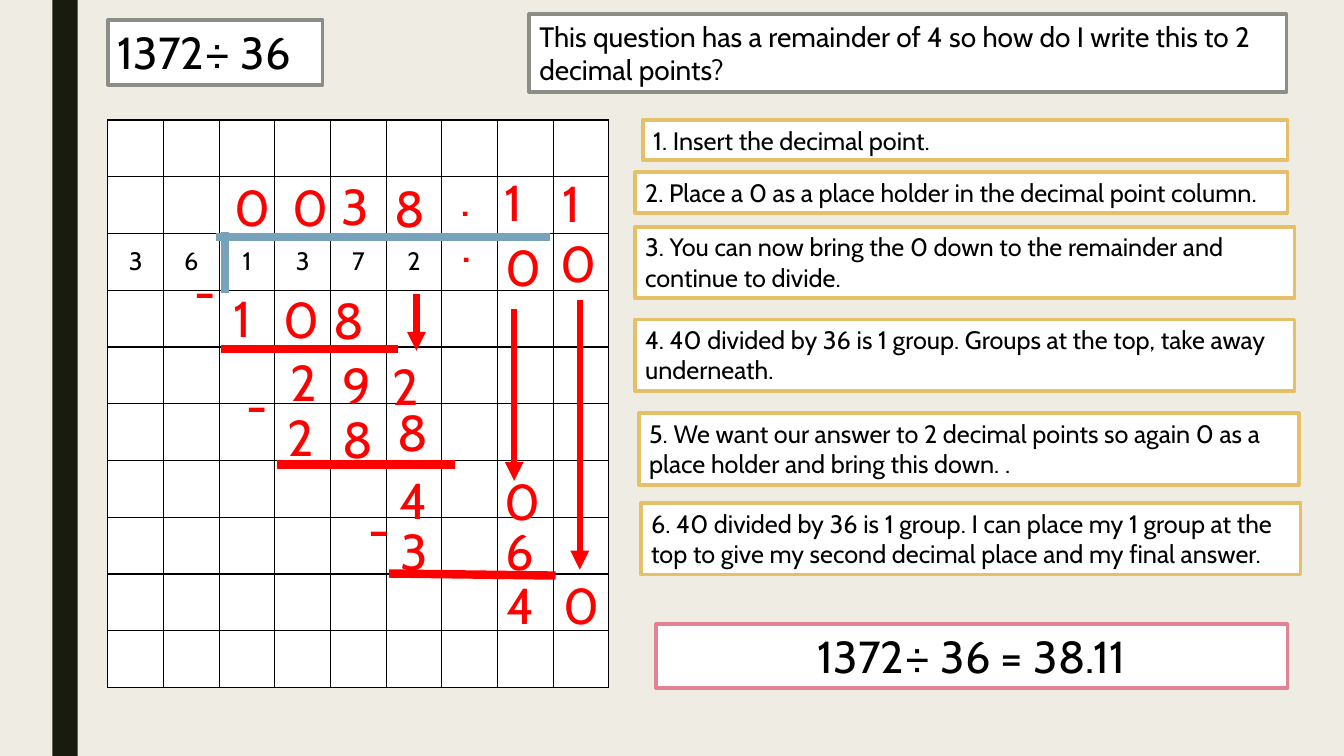
from lxml import etree
from pptx import Presentation
from pptx.dml.color import RGBColor
from pptx.enum.shapes import MSO_CONNECTOR, MSO_SHAPE
from pptx.enum.text import MSO_ANCHOR, PP_ALIGN
from pptx.oxml.ns import qn
from pptx.util import Pt

RECTANGLE = MSO_SHAPE.RECTANGLE
STRAIGHT = MSO_CONNECTOR.STRAIGHT
TOP, MIDDLE = MSO_ANCHOR.TOP, MSO_ANCHOR.MIDDLE
LEFT, CENTER = PP_ALIGN.LEFT, PP_ALIGN.CENTER
PX = 9144

THEME = {
    "font": "Cabin",
    "background": "EFEDE3", "stripe": "191B0E", "paper": "FFFFFF", "ink": "000000",
    "question": "8C8D86", "step": "E6C069", "answer": "E28394",
    "bracket": "77A2BB", "working": "FF0000",
    "sum_size": 32, "question_size": 20, "step_size": 18, "working_size": 36,
    "box_line": 2.75, "grid_line": 1, "rule_line": 6, "arrow_line": 4.5,
}


def write(frame, text, size, color="ink", align=LEFT):
    frame.word_wrap = True
    paragraph = frame.paragraphs[0]
    paragraph.alignment = align
    run = paragraph.add_run()
    run.text = text
    run.font.color.rgb = RGBColor.from_string(THEME[color])
    formats = {"name": THEME["font"], "size": Pt(THEME[size])}
    for attribute, value in formats.items():
        setattr(run.font, attribute, value)


def draw_line(start, end, color, weight):
    line = slide.shapes.add_connector(STRAIGHT, *[n * PX for n in start + end])
    line.line.color.rgb = RGBColor.from_string(THEME[color])
    line.line.width = Pt(THEME[weight])
    etree.SubElement(line._element.spPr, qn("a:effectLst"))
    return line


prs = Presentation()
prs.slide_width, prs.slide_height = 1333 * PX, 750 * PX
slide = prs.slides.add_slide(prs.slide_layouts[6])
slide.background.fill.solid()
slide.background.fill.fore_color.rgb = RGBColor.from_string(THEME["background"])

stripe = slide.shapes.add_shape(RECTANGLE, 52 * PX, 0, 25 * PX, 750 * PX)
stripe.shadow.inherit = False
stripe.fill.solid()
stripe.fill.fore_color.rgb = RGBColor.from_string(THEME["stripe"])
stripe.line.fill.background()

COLUMNS, ROWS = 9, 10
GRID_LEFT, GRID_TOP, GRID_WIDTH, GRID_HEIGHT = 107, 119, 497, 563
grid = slide.shapes.add_table(
    ROWS, COLUMNS, GRID_LEFT * PX, GRID_TOP * PX, GRID_WIDTH * PX, GRID_HEIGHT * PX
).table
grid.first_row = grid.horz_banding = False
for column in grid.columns:
    column.width = GRID_WIDTH * PX // COLUMNS
for row in grid.rows:
    row.height = GRID_HEIGHT * PX // ROWS
for cell in grid.iter_cells():
    cell.vertical_anchor = MIDDLE
    properties = cell._tc.get_or_add_tcPr()
    for side in ("a:lnL", "a:lnR", "a:lnT", "a:lnB"):
        border = etree.SubElement(properties, qn(side), w=str(Pt(THEME["grid_line"])))
        border_fill = etree.SubElement(border, qn("a:solidFill"))
        etree.SubElement(border_fill, qn("a:srgbClr"), val=THEME["ink"])
    cell.fill.solid()
    cell.fill.fore_color.rgb = RGBColor.from_string(THEME["paper"])
for index, digit in enumerate("361372"):
    write(grid.cell(2, index).text_frame, digit, "step_size", align=CENTER)

bracket = [((214, 235), (545, 235)), ((223, 291), (223, 230))]
subtraction_rules = [
    ((219, 346), (395, 346)),
    ((275, 461), (451, 461)),
    ((386, 569), (551, 571)),
]
for color, rules in (("bracket", bracket), ("working", subtraction_rules)):
    for start, end in rules:
        draw_line(start, end, color, "rule_line")

for x, top, bottom in ((413, 292, 348), (510, 307, 477), (575, 298, 565)):
    arrow = draw_line((x, top), (x, bottom), "working", "arrow_line")
    etree.SubElement(arrow.line._get_or_add_ln(), qn("a:tailEnd"), type="triangle")

working_rows = [
    [("0", 223, 170), ("0", 280, 170), ("3", 329, 169), ("8", 381, 171),
     (".", 447, 160), ("1", 491, 165), ("1", 548, 166)],
    [(".", 448, 206), ("0", 492, 229), ("0", 546, 225)],
    [("-", 183, 253), ("1", 222, 280), ("0", 271, 281), ("8", 321, 282)],
    [("2", 278, 343), ("9", 330, 346), ("2", 379, 347)],
    [("-", 235, 366), ("2", 275, 398), ("8", 330, 400), ("8", 384, 393)],
    [("4", 386, 460), ("0", 491, 461)],
    [("-", 356, 489), ("3", 387, 511), ("6", 492, 511)],
    [("4", 493, 565), ("0", 549, 565)],
]
for working_row in working_rows:
    for symbol, left, top in working_row:
        spot = slide.shapes.add_textbox(left * PX, top * PX, 58 * PX, 71 * PX)
        write(spot.text_frame, symbol, "working_size", "working")

panels = [
    ("1372÷ 36", (107, 20, 213, 64), "question", "sum_size", LEFT),
    ("This question has a remainder of 4 so how do I write this to 2 decimal points?",
     (525, 14, 751, 77), "question", "question_size", LEFT),
    ("1372÷ 36 = 38.11", (651, 619, 626, 64), "answer", "sum_size", CENTER),
]
steps = [
    ("Insert the decimal point.", (638, 119, 639, 40)),
    ("Place a 0 as a place holder in the decimal point column.", (630, 171, 647, 40)),
    ("You can now bring the 0 down to the remainder and continue to divide.",
     (630, 225, 654, 71)),
    ("40 divided by 36 is 1 group. Groups at the top, take away underneath.",
     (630, 317, 654, 71)),
    ("We want our answer to 2 decimal points so again 0 as a place holder "
     "and bring this down. .", (634, 410, 654, 71)),
    ("40 divided by 36 is 1 group. I can place my 1 group at the top "
     "to give my second decimal place and my final answer.", (636, 499, 654, 71)),
]
for number, (instruction, place) in enumerate(steps, 1):
    panels.append((f"{number}. {instruction}", place, "step", "step_size", LEFT))
for text, place, outline, size, align in panels:
    panel = slide.shapes.add_shape(RECTANGLE, *[n * PX for n in place])
    panel.shadow.inherit = False
    panel.fill.solid()
    panel.fill.fore_color.rgb = RGBColor.from_string(THEME["paper"])
    panel.line.color.rgb = RGBColor.from_string(THEME[outline])
    panel.line.width = Pt(THEME["box_line"])
    panel.text_frame.vertical_anchor = TOP
    write(panel.text_frame, text, size, align=align)

prs.save("out.pptx")
